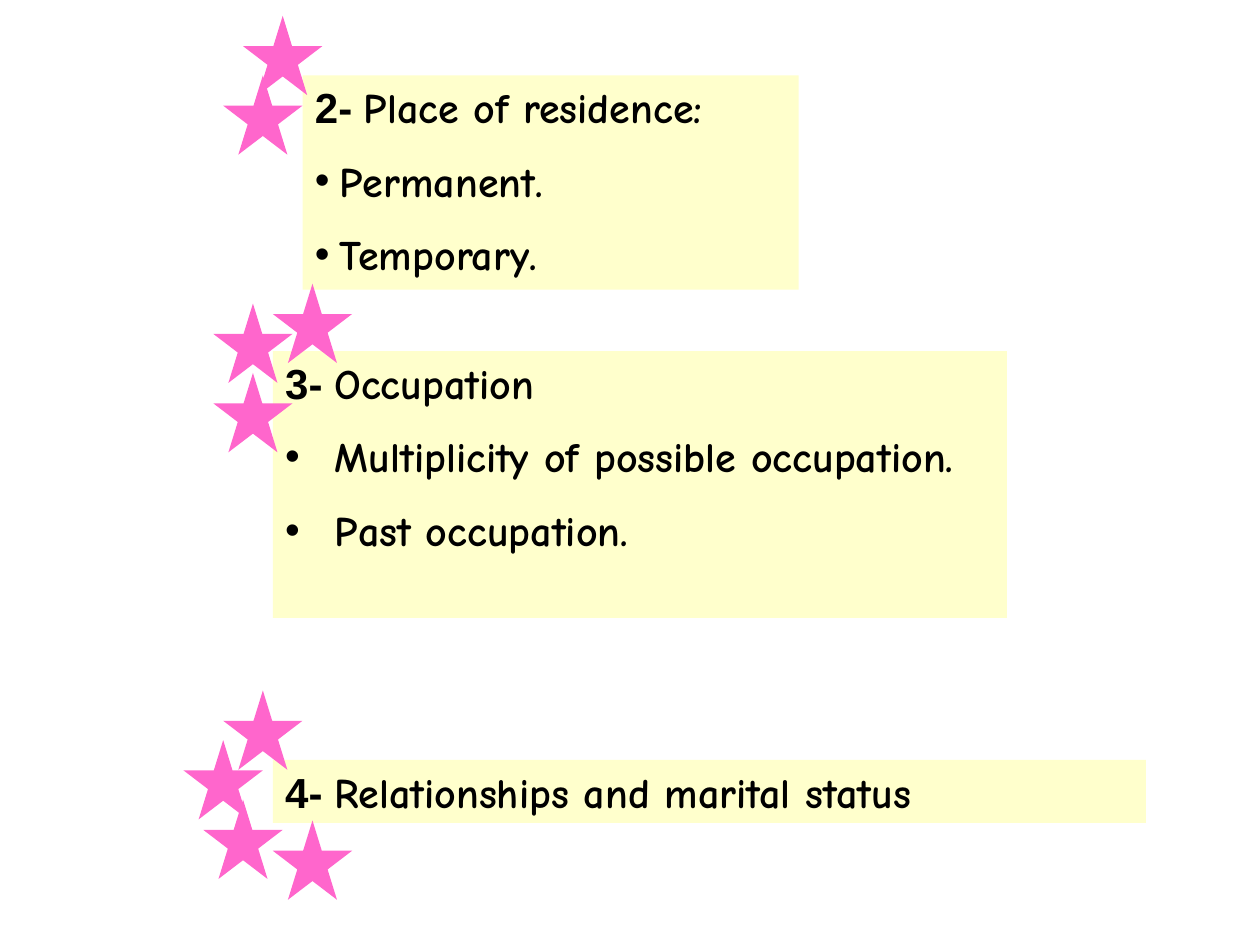
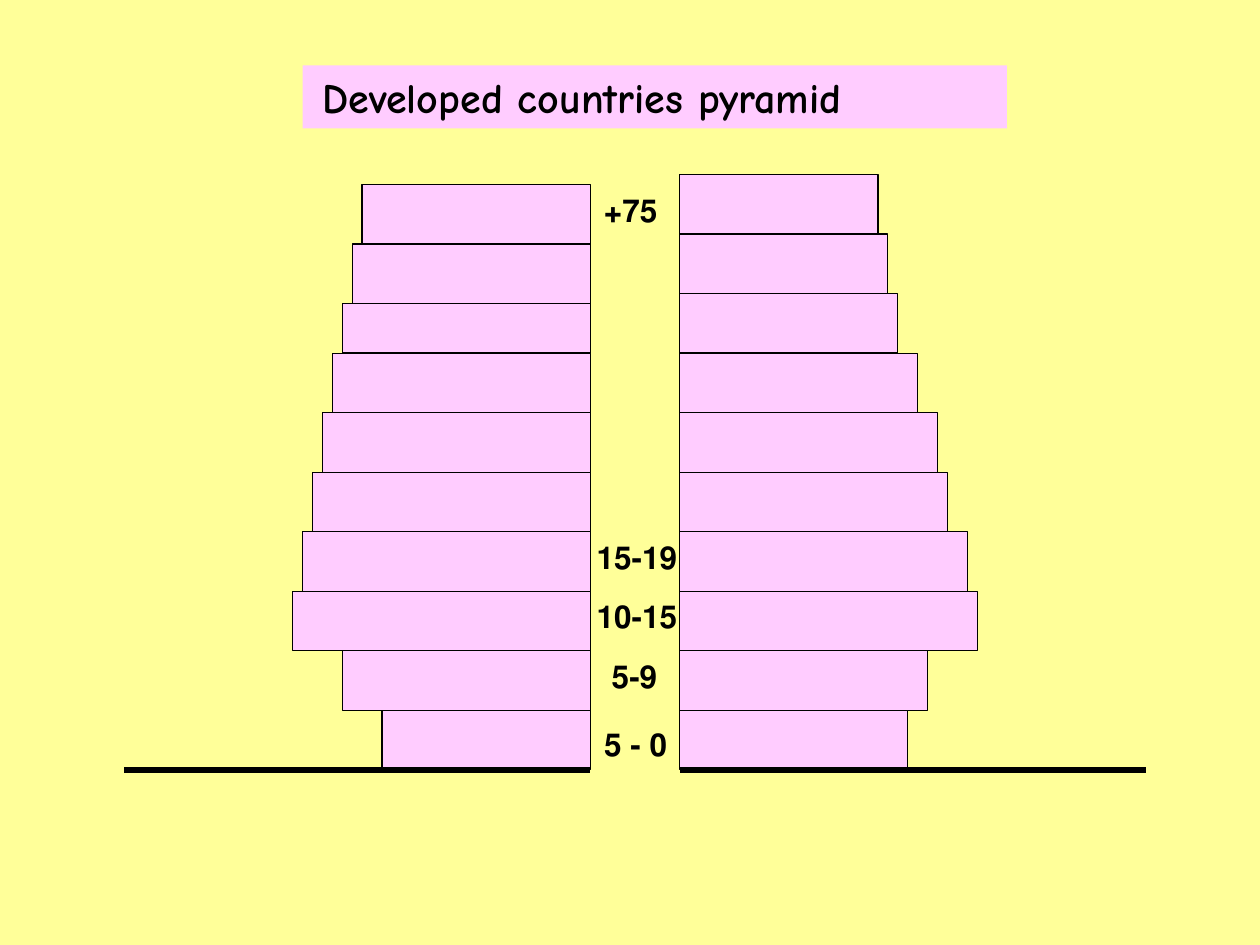
from lxml import etree
from pptx import Presentation
from pptx.dml.color import RGBColor
from pptx.enum.shapes import MSO_CONNECTOR, MSO_SHAPE
from pptx.enum.text import MSO_ANCHOR, PP_ALIGN
from pptx.oxml.ns import qn
from pptx.util import Cm, Pt

RECT, STAR = MSO_SHAPE.RECTANGLE, MSO_SHAPE.STAR_5_POINT
LINE = MSO_CONNECTOR.STRAIGHT
LEFT, RIGHT = PP_ALIGN.LEFT, PP_ALIGN.RIGHT
TOP = MSO_ANCHOR.TOP

BLACK, CREAM, YELLOW = "000000", "FFFFCC", "FFFF99"
ROSE, PINK = "FFCCFF", "FF66CC"
SANS, HAND = "Arial", "Comic Neue"
STAR_SIZE = 1.6
BAR_STEP = 1.2

# box (left, top, width, height), number, heading, bullets, bullet indent,
# star offsets from the corner of the box
TOPICS = [
    ((6.1, 1.52, 10, 4.32), "2- ", "Place of residence:",
     ["Permanent.", "Temporary."], 0.5,
     [(-1.2, -1.2), (-1.6, 0)]),
    ((5.5, 7.08, 14.8, 5.38), "3- ", "Occupation",
     ["Multiplicity of possible occupation.", "Past occupation."], 1,
     [(-1.2, -0.96), (-1.2, 0.44), (0, -1.36)]),
    ((5.5, 15.32, 17.6, 1.27), "4- ", "Relationships and marital status",
     [], 0,
     [(-1.4, 0.8), (-1.8, -0.4), (-1, -1.4), (0, 1.22)]),
]

# bar widths and heights from the oldest group down to the youngest
MEN = [(4.6, 1.2), (4.8, 1.2), (5, 1), (5.2, 1.2), (5.4, 1.2),
       (5.6, 1.2), (5.8, 1.2), (6, 1.2), (5, 1.2), (4.2, 1.2)]
WOMEN = [(wide, BAR_STEP)
         for wide in (4, 4.2, 4.4, 4.8, 5.2, 5.4, 5.8, 6, 5, 4.6)]

# age label, right edge from the left side of the gap, top above the base line
AGES = [("75+", 1.6, 11.8), ("15-19", 2, 4.8), ("10-15", 2, 3.6),
        ("5-9", 1.6, 2.4), ("0 - 5", 1.8, 1.02)]


def rgb(code):
    return RGBColor.from_string(code)


def add_form(shapes, kind, box, fill, edge=None):
    form = shapes.add_shape(kind, *map(Cm, box))
    form.shadow.inherit = False
    form.fill.solid()
    form.fill.fore_color.rgb = rgb(fill)
    if edge:
        form.line.color.rgb = rgb(edge)
        form.line.width = Pt(0.75)
    else:
        form.line.fill.background()
    return form


def add_run(para, text, font, size=24):
    run = para.add_run()
    run.text = text
    run.font.name = font
    run.font.size = Pt(size)
    run.font.bold = True
    run.font.color.rgb = rgb(BLACK)


def set_bullet(para, indent):
    props = para._p.get_or_add_pPr()
    props.set("marL", str(Cm(indent)))
    props.set("indent", str(-Cm(indent)))
    etree.SubElement(props, qn("a:buFont")).set("typeface", SANS)
    etree.SubElement(props, qn("a:buChar")).set("char", "•")


def add_panel(slide, box, fill):
    """Add a filled text box and return its frame, aligned to the top left."""
    frame = add_form(slide.shapes, RECT, box, fill).text_frame
    frame.word_wrap = True
    frame.vertical_anchor = TOP
    frame.paragraphs[0].alignment = LEFT
    return frame


def add_topic(slide, box, mark, head, points, indent, stars):
    frame = add_panel(slide, box, CREAM)
    add_run(frame.paragraphs[0], mark, SANS)
    add_run(frame.paragraphs[0], head, HAND)
    for point in points:
        para = frame.add_paragraph()
        para.alignment = LEFT
        set_bullet(para, indent)
        para.space_before = Pt(13.2)
        add_run(para, point, HAND)
    for across, down in stars:
        place = (box[0] + across, box[1] + down, STAR_SIZE, STAR_SIZE)
        add_form(slide.shapes, STAR, place, PINK)


def add_side(slide, edge, base, bars, way):
    """Stack bars up from the base; way is -1 to grow left, 1 to grow right."""
    group = slide.shapes.add_group_shape()
    top = base - sum(high for _, high in bars)
    for wide, high in bars:
        left = edge - wide if way < 0 else edge
        add_form(group.shapes, RECT, (left, top, wide, high), ROSE, BLACK)
        top += high


def add_base(slide, start, end, level):
    line = slide.shapes.add_connector(
        LINE, Cm(start), Cm(level), Cm(end), Cm(level))
    line.line.color.rgb = rgb(BLACK)
    line.line.width = Pt(3)
    etree.SubElement(line._element.spPr, qn("a:effectLst"))


def add_age(slide, text, right, top):
    wide = 2.4
    box = slide.shapes.add_textbox(Cm(right - wide), Cm(top), Cm(wide), Cm(1.02))
    frame = box.text_frame
    frame.word_wrap = True
    frame.margin_left = 0
    para = frame.paragraphs[0]
    para.alignment = RIGHT
    para._p.get_or_add_pPr().set("rtl", "1")
    add_run(para, text, SANS, 18)


def add_pyramid(slide, box):
    """Draw both sides, base lines and ages; box is left, base, width, gap."""
    left, base, wide, gap = box
    inner = left + (wide - gap) / 2
    outer = inner + gap
    add_side(slide, inner, base, MEN, -1)
    add_side(slide, outer, base, WOMEN, 1)
    add_base(slide, left, inner, base)
    add_base(slide, outer, left + wide, base)
    for text, right, above in AGES:
        add_age(slide, text, inner + right, base - above)


def add_slide(deck, back):
    slide = deck.slides.add_slide(deck.slide_layouts[6])
    slide.background.fill.solid()
    slide.background.fill.fore_color.rgb = rgb(back)
    return slide


def main():
    deck = Presentation()
    deck.slide_width, deck.slide_height = Cm(25.4), Cm(19.05)

    slide = add_slide(deck, "FFFFFF")
    for topic in TOPICS:
        add_topic(slide, *topic)

    slide = add_slide(deck, YELLOW)
    add_pyramid(slide, (2.5, 15.52, 20.6, 1.8))
    title = add_panel(slide, (6.1, 1.32, 14.2, 1.27), ROSE)
    title.margin_left = Cm(0.4)
    add_run(title.paragraphs[0], "Developed countries pyramid", HAND)

    deck.save("out.pptx")


if __name__ == "__main__":
    main()
